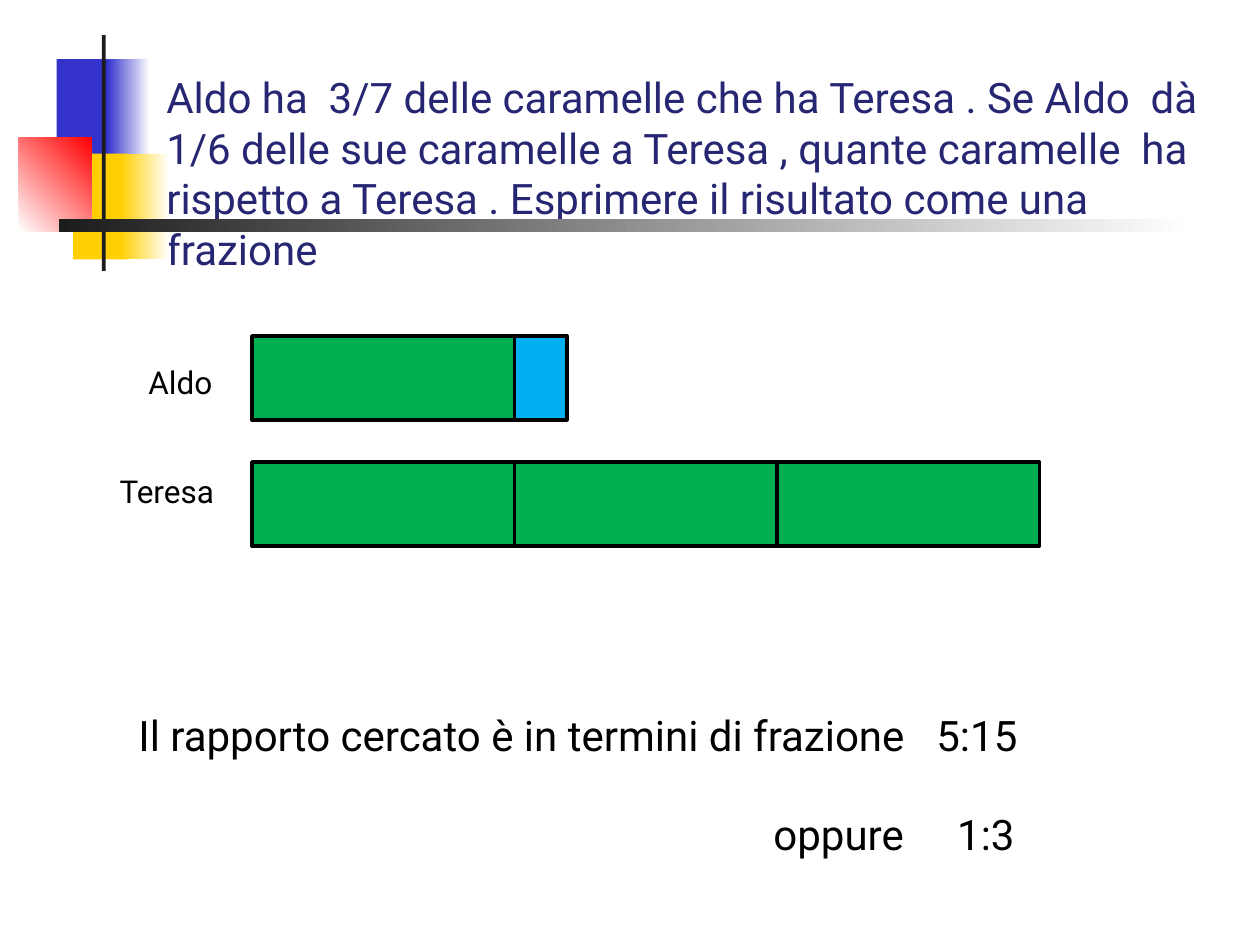
from lxml import etree
from pptx import Presentation
from pptx.dml.color import RGBColor
from pptx.enum.shapes import MSO_SHAPE
from pptx.enum.text import MSO_ANCHOR, PP_ALIGN
from pptx.oxml.ns import qn
from pptx.util import Pt

RECT = MSO_SHAPE.RECTANGLE
TOP = MSO_ANCHOR.TOP
LEFT = PP_ALIGN.LEFT

THEME = {
    "font": "Roboto", "large": 24, "small": 18,
    "title": "262673", "text": "000000", "line": "000000",
    "green": "00B050", "blue": "00B0F0",
    "navy": "3333CC", "gold": "FFCF01", "red": "FF0000",
    "dark": "1C1C1C", "white": "FFFFFF",
}

TITLE = ("Aldo ha  3/7 delle caramelle che ha Teresa . Se Aldo  dà 1/6 delle sue "
         "caramelle a Teresa , quante caramelle  ha rispetto a Teresa . "
         "Esprimere il risultato come una frazione")
TITLE_BOX = (87.84, 37.44, 632.16, 94.32)

BARS = [
    (192, [(5, "green"), (1, "blue")]),
    (264, [(5, "green")] * 3),
]
START, UNIT, HIGH = 144, 30, 48

LABELS = [
    ("Aldo", (77.76, 203.76, 59.76, 28.8)),
    ("Teresa", (61.2, 266.4, 82.8, 28.8)),
]
RESULTS = [
    ("Il rapporto cercato è in termini di frazione\t5:15", (72, 401.76, 558, 36.72), 456),
    ("oppure\t1:3", (434.88, 458.64, 188.64, 36), 105),
]

DECOR = [
    ((32.4, 33.84, 32.4, 60.48), ["navy"], 0),
    ((61.2, 33.84, 24.48, 60.48), ["navy", "white"], 0),
    ((41.76, 87.84, 31.68, 60.48), ["gold"], 0),
    ((69.12, 87.84, 27.36, 60.48), ["gold", "white"], 0),
    ((10.8, 78.48, 41.76, 54), ["white", "red"], 45),
    ((58.32, 20.16, 2.16, 134.64), ["dark"], 0),
    ((33.84, 125.28, 648, 7.2), ["dark", "white"], 0),
]


def color(name):
    return RGBColor.from_string(THEME[name])


def write(shape, text, size="large", tone="text", tab=None):
    frame = shape.text_frame
    frame.word_wrap = True
    frame.vertical_anchor = TOP
    para = frame.paragraphs[0]
    para.alignment = LEFT
    run = para.add_run()
    run.text = text
    run.font.name = THEME["font"]
    run.font.size = Pt(THEME[size])
    run.font.color.rgb = color(tone)
    if tab:
        stops = etree.SubElement(para._p.get_or_add_pPr(), qn("a:tabLst"))
        etree.SubElement(stops, qn("a:tab"), pos=str(Pt(tab)), algn="l")


def block(home, box, tones, angle=0, line=None):
    shape = home.add_shape(RECT, *map(Pt, box))
    shape.shadow.inherit = False
    if len(tones) == 1:
        shape.fill.solid()
        shape.fill.fore_color.rgb = color(tones[0])
    else:
        shape.fill.gradient()
        shape.fill.gradient_angle = angle
        for stop, tone in zip(shape.fill.gradient_stops, tones):
            stop.color.rgb = color(tone)
    if line:
        shape.line.color.rgb = color("line")
        shape.line.width = Pt(line)
    else:
        shape.line.fill.background()


def main():
    deck = Presentation()
    deck.slide_width, deck.slide_height = Pt(720), Pt(540)
    slide = deck.slides.add_slide(deck.slide_layouts[5])
    shapes = slide.shapes

    title = shapes.title
    title.left, title.top, title.width, title.height = map(Pt, TITLE_BOX)
    write(title, TITLE, tone="title")

    for top, parts in BARS:
        left = START
        for count, tone in parts:
            block(shapes, (left, top, count * UNIT, HIGH), [tone], line=2)
            left += count * UNIT

    for text, box in LABELS:
        write(shapes.add_textbox(*map(Pt, box)), text, size="small")
    for text, box, tab in RESULTS:
        write(shapes.add_textbox(*map(Pt, box)), text, tab=tab)

    group = shapes.add_group_shape()
    for box, tones, angle in DECOR:
        block(group.shapes, box, tones, angle)

    deck.save("out.pptx")


if __name__ == "__main__":
    main()
